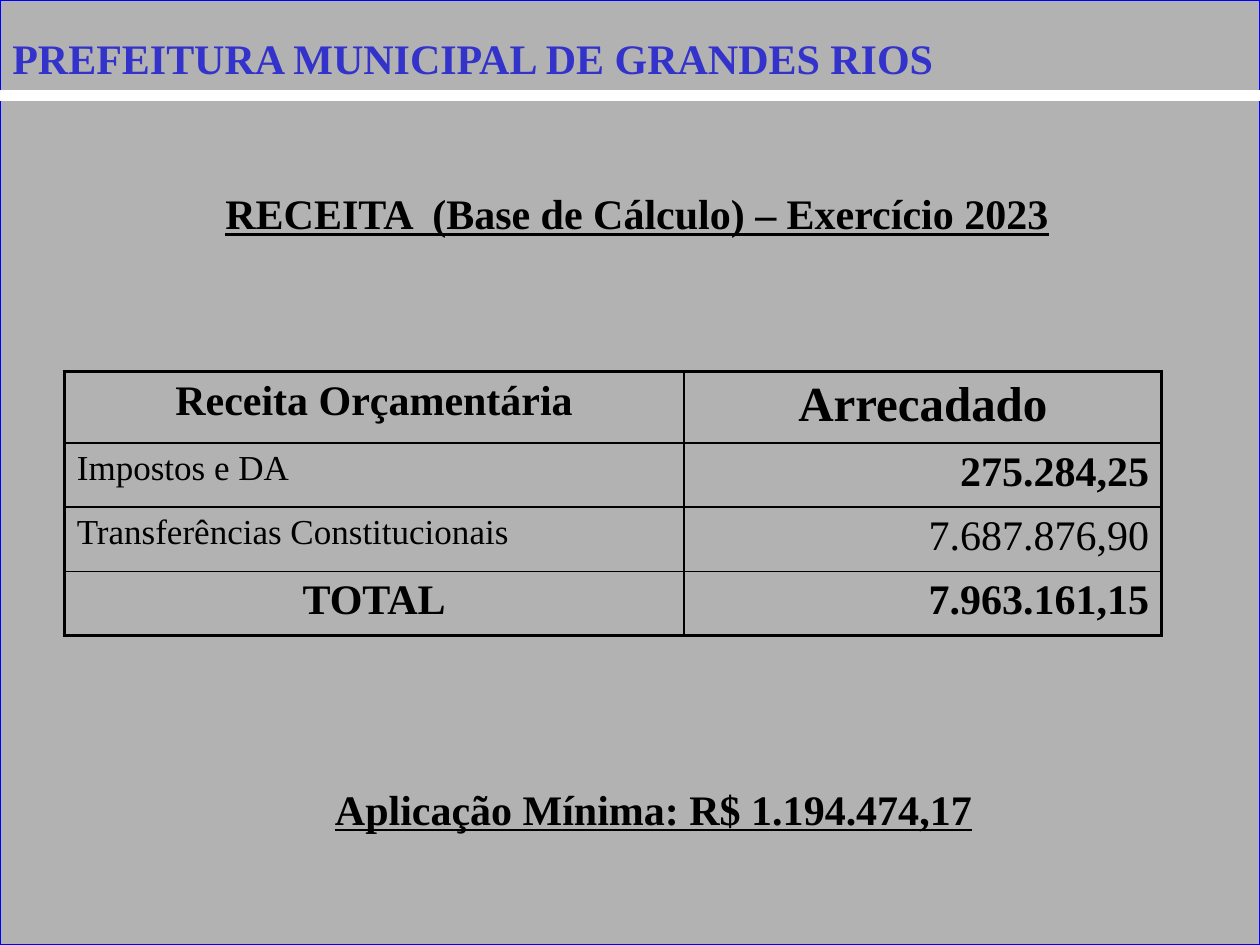
from lxml import etree
from pptx import Presentation, util as u
from pptx.dml.color import RGBColor
from pptx.enum import shapes, text
from pptx.oxml import ns

Pt = u.Pt
COLORS = {"background": "B2B2B2", "frame": "0000FF", "rule": "FFFFFF",
          "title": "3333CC", "ink": "000000", "shadow": "808080"}
FONT = {"name": "Times New Roman", "size": Pt(24), "bold": True, "underline": False}
LEFT, CENTER, RIGHT = text.PP_ALIGN.LEFT, text.PP_ALIGN.CENTER, text.PP_ALIGN.RIGHT
THIN, THICK = Pt(1), Pt(2.25)

# Each cell: text, alignment, size, bold
REVENUE = [
    [("Receita Orçamentária", CENTER, 24, True), ("Arrecadado", CENTER, 28, True)],
    [("Impostos e DA", LEFT, 20, False), ("275.284,25", RIGHT, 24, True)],
    [("Transferências Constitucionais", LEFT, 20, False),
     ("7.687.876,90", RIGHT, 24, False)],
    [("TOTAL", CENTER, 24, True), ("7.963.161,15", RIGHT, 24, True)],
]


def rgb(name):
    return RGBColor.from_string(COLORS[name])


def add_color(parent, name):
    fill = etree.SubElement(parent, ns.qn("a:solidFill"))
    etree.SubElement(fill, ns.qn("a:srgbClr"), val=COLORS[name])


def write(frame, content, align, color="ink", **changes):
    paragraph = frame.paragraphs[0]
    paragraph.alignment = align
    run = paragraph.add_run()
    run.text = content
    for attribute, value in {**FONT, **changes}.items():
        setattr(run.font, attribute, value)
    run.font.color.rgb = rgb(color)
    return run


def add_text(slide, box, content, align, margin_top=Pt(3.6), **changes):
    frame = slide.shapes.add_textbox(*map(Pt, box)).text_frame
    frame.word_wrap = True
    frame.margin_top = margin_top
    return write(frame, content, align, **changes)


def add_text_shadow(run):
    properties = run.font.fill._xPr
    effects = etree.Element(ns.qn("a:effectLst"))
    shadow = etree.SubElement(effects, ns.qn("a:outerShdw"),
                              dist="25400", dir="2700000", algn="tl")
    etree.SubElement(shadow, ns.qn("a:srgbClr"), val=COLORS["shadow"])
    properties.find(ns.qn("a:solidFill")).addnext(effects)


def add_backdrop(slide, box):
    backdrop = slide.shapes.add_shape(shapes.MSO_SHAPE.RECTANGLE, *map(Pt, box))
    backdrop.shadow.inherit = False
    backdrop.fill.solid()
    backdrop.fill.fore_color.rgb = rgb("background")
    backdrop.line.color.rgb = rgb("frame")
    backdrop.line.width = Pt(0.75)


def add_header(slide, box):
    left, top, width, height = box
    rule_top = Pt(top + height)
    rule = slide.shapes.add_connector(shapes.MSO_CONNECTOR.STRAIGHT, Pt(left),
                                      rule_top, Pt(left + width), rule_top)
    rule.line.color.rgb = rgb("rule")
    rule.line.width = Pt(6)
    etree.SubElement(rule._element.spPr, ns.qn("a:effectLst"))
    title = add_text(slide, (left, top + 15.1, 592.6, 36),
                     "PREFEITURA MUNICIPAL DE GRANDES RIOS", LEFT, color="title")
    add_text_shadow(title)


def set_borders(cell, widths):
    """Draw the left, right, top and bottom borders in that order."""
    properties = cell._tc.get_or_add_tcPr()
    for index, (side, width) in enumerate(zip("LRTB", widths)):
        border = etree.Element(ns.qn(f"a:ln{side}"), w=str(int(width)))
        add_color(border, "ink")
        properties.insert(index, border)


def add_revenue_table(slide, box):
    left, top, width, height = box
    last_row, last_column = len(REVENUE) - 1, len(REVENUE[0]) - 1
    table = slide.shapes.add_table(last_row + 1, last_column + 1,
                                   *map(Pt, box)).table
    table.first_row = table.horz_banding = False
    label_width, header_height = 354.2, 40.6
    for column, size in zip(table.columns, (label_width, width - label_width)):
        column.width = Pt(size)
    for index, row in enumerate(table.rows):
        row.height = Pt((height - header_height) / last_row if index else header_height)
    for r, values in enumerate(REVENUE):
        for c, (content, align, size, bold) in enumerate(values):
            cell = table.cell(r, c)
            cell.fill.background()
            edges = (c == 0, c == last_column, r == 0, r == last_row)
            set_borders(cell, [THICK if edge else THIN for edge in edges])
            write(cell.text_frame, content, align, size=Pt(size), bold=bold)


def main():
    presentation = Presentation()
    presentation.slide_width, presentation.slide_height = Pt(720), Pt(540)
    slide = presentation.slides.add_slide(presentation.slide_layouts[6])
    add_backdrop(slide, (0, 0, 720, 540))
    add_header(slide, (0, 0, 720, 54.7))
    add_text(slide, (70.6, 62.6, 586.8, 79.9),
             "RECEITA  (Base de Cálculo) – Exercício 2023", CENTER,
             margin_top=Pt(44.7), underline=True)
    add_revenue_table(slide, (36.7, 212.4, 627.1, 150.4))
    add_text(slide, (175, 444.2, 396.7, 36),
             "Aplicação Mínima: R$ 1.194.474,17", CENTER, underline=True)
    presentation.save("out.pptx")


if __name__ == "__main__":
    main()
